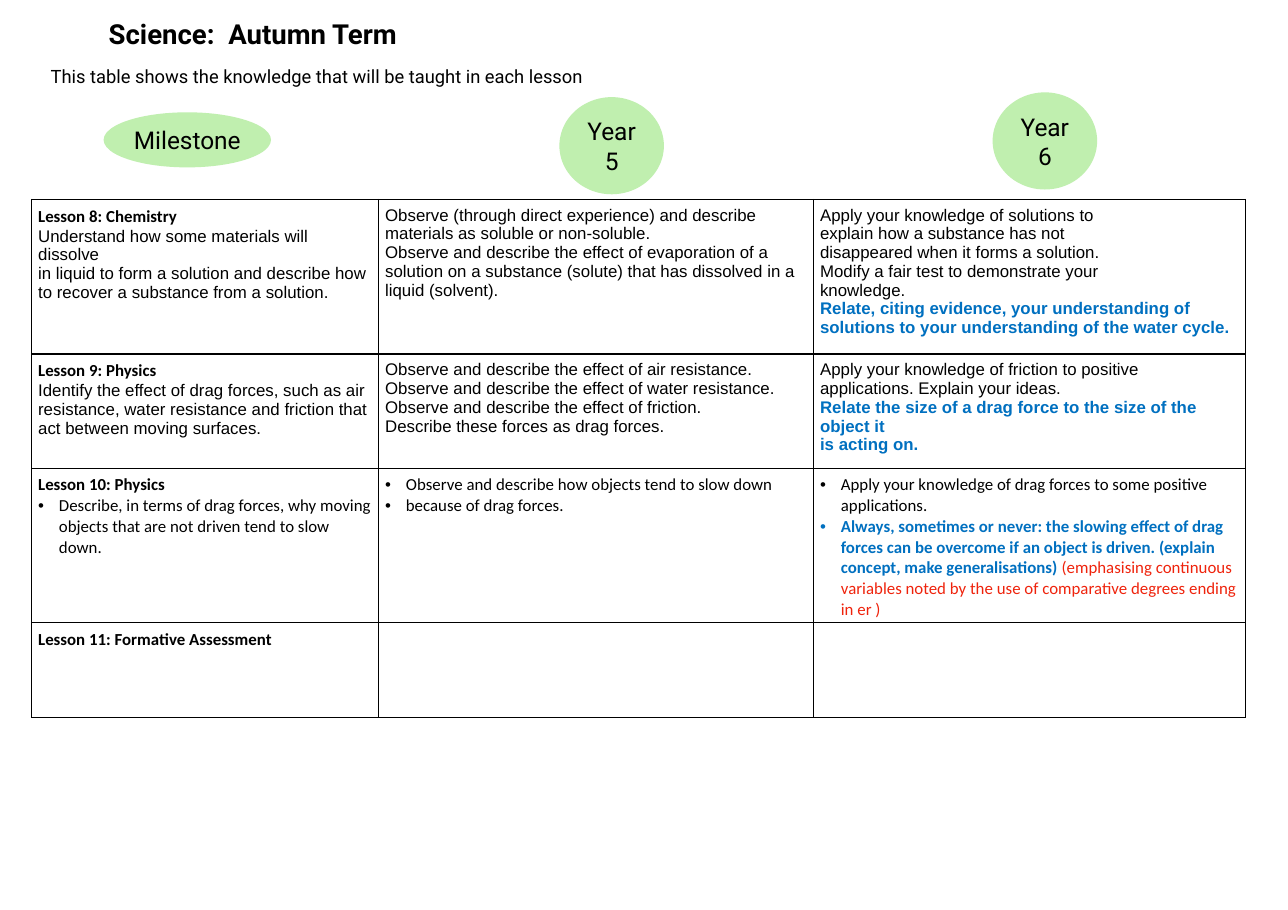
from lxml.etree import SubElement
from pptx import Presentation
from pptx.dml.color import RGBColor
from pptx.enum.shapes import MSO_SHAPE
from pptx.enum.text import MSO_ANCHOR, PP_ALIGN
from pptx.oxml.ns import qn
from pptx.util import Cm, Pt

rgb = RGBColor.from_string
BLACK, BLUE, RED, GREEN, WHITE = "000000", "0070C0", "EF230C", "C0EFAF", "FFFFFF"


def add_run(p, text, size, font, color=BLACK, bold=False):
    r = p.add_run()
    r.text = text
    r.font.size = Pt(size)
    r.font.name = font
    r.font.bold = bold
    r.font.color.rgb = rgb(color)


def set_frame(tf, wrap=True):
    tf.word_wrap = wrap
    tf.vertical_anchor = MSO_ANCHOR.MIDDLE
    tf.margin_left = tf.margin_right = tf.margin_top = tf.margin_bottom = Cm(0.1)
    return tf.paragraphs[0]


prs = Presentation()
prs.slide_width, prs.slide_height = Cm(29.7), Cm(20.98)
s = prs.slides.add_slide(prs.slide_layouts[6])

title = s.shapes.add_textbox(Cm(2.13), Cm(0.28), Cm(7.4), Cm(1))
p = set_frame(title.text_frame, wrap=False)
p.alignment = PP_ALIGN.CENTER
add_run(p, "Science:  Autumn Term", 18, "Roboto", bold=True)

intro = s.shapes.add_textbox(Cm(1.07), Cm(1.4), Cm(26.5), Cm(0.71))
p = set_frame(intro.text_frame)
add_run(p, "This table shows the knowledge that will be taught in each lesson", 12, "Roboto")

STYLES = {
    "head": ("Calibri", BLACK, True),
    "plain": ("Arial", BLACK, False),
    "extend": ("Arial", BLUE, True),
    "bullet": ("Calibri", BLACK, False),
    "bullet extend": ("Calibri", BLUE, True),
    "note": ("Calibri", RED, False),
}
lessons = [
    [
        [("head", "Lesson 8: Chemistry"),
         ("plain", "Understand how some materials will dissolve"),
         ("plain", "in liquid to form a solution and describe how"),
         ("plain", "to recover a substance from a solution.")],
        [("plain", "Observe (through direct experience) and describe"),
         ("plain", "materials as soluble or non-soluble."),
         ("plain", "Observe and describe the effect of evaporation of a"),
         ("plain", "solution on a substance (solute) that has dissolved in a"),
         ("plain", "liquid (solvent).")],
        [("plain", "Apply your knowledge of solutions to"),
         ("plain", "explain how a substance has not"),
         ("plain", "disappeared when it forms a solution."),
         ("plain", "Modify a fair test to demonstrate your"),
         ("plain", "knowledge."),
         ("extend", "Relate, citing evidence, your understanding of"),
         ("extend", "solutions to your understanding of the water cycle.")],
    ],
    [
        [("head", "Lesson 9: Physics"),
         ("plain", "Identify the effect of drag forces, such as air"),
         ("plain", "resistance, water resistance and friction that"),
         ("plain", "act between moving surfaces.")],
        [("plain", "Observe and describe the effect of air resistance."),
         ("plain", "Observe and describe the effect of water resistance."),
         ("plain", "Observe and describe the effect of friction."),
         ("plain", "Describe these forces as drag forces.")],
        [("plain", "Apply your knowledge of friction to positive"),
         ("plain", "applications. Explain your ideas."),
         ("extend", "Relate the size of a drag force to the size of the object it"),
         ("extend", "is acting on.")],
    ],
    [
        [("head", "Lesson 10: Physics"),
         ("bullet", "Describe, in terms of drag forces, why moving objects that are "
                    "not driven tend to slow down.")],
        [("bullet", "Observe and describe how objects tend to slow down"),
         ("bullet", "because of drag forces.")],
        [("bullet", "Apply your knowledge of drag forces to some positive applications."),
         ("bullet extend", "Always, sometimes or never: the slowing effect of drag forces can be "
                           "overcome if an object is driven. (explain concept, make "
                           "generalisations) "),
         ("note", "(emphasising continuous variables noted by the use of comparative "
                  "degrees ending in er )")],
    ],
    [[("head", "Lesson 11: Formative Assessment")], [], []],
]
col_widths = [8, 10.03, 9.96]
row_heights = [3.55, 2.61, 3.55, 2.18]

frame = s.shapes.add_table(len(row_heights), len(col_widths), Cm(0.73), Cm(4.6),
                           Cm(sum(col_widths)), Cm(sum(row_heights)))
table = frame.table
table.first_row = table.horz_banding = False
for col, width in zip(table.columns, col_widths):
    col.width = Cm(width)
for row, height, lesson in zip(table.rows, row_heights, lessons):
    row.height = Cm(height)
    for cell, items in zip(row.cells, lesson):
        cell.margin_left = cell.margin_right = cell.margin_top = cell.margin_bottom = Cm(0.15)
        tcPr = cell._tc.get_or_add_tcPr()
        for side in ("lnL", "lnR", "lnT", "lnB"):
            ln = SubElement(tcPr, qn(f"a:{side}"), w=str(Pt(1)))
            SubElement(SubElement(ln, qn("a:solidFill")), qn("a:srgbClr"), val=BLACK)
        cell.fill.solid()
        cell.fill.fore_color.rgb = rgb(WHITE)
        tf = cell.text_frame
        for i, (style, text) in enumerate(items):
            if style != "note":
                p = tf.paragraphs[0] if i == 0 else tf.add_paragraph()
            if style.startswith("bullet"):
                pPr = p._p.get_or_add_pPr()
                pPr.set("marL", str(Cm(0.48)))
                pPr.set("indent", str(-Cm(0.48)))
                SubElement(pPr, qn("a:buFont"), typeface="Arial")
                SubElement(pPr, qn("a:buChar"), char="•")
            add_run(p, text, 11, *STYLES[style])

headings = [
    ("Year 6", 22.89, 2.13, 2.41, 2.24),
    ("Year 5", 12.9, 2.24, 2.41, 2.24),
    ("Milestone", 2.39, 2.59, 3.86, 1.27),
]
for text, left, top, width, height in headings:
    sp = s.shapes.add_shape(MSO_SHAPE.OVAL, Cm(left), Cm(top), Cm(width), Cm(height))
    sp.shadow.inherit = False
    sp.fill.solid()
    sp.fill.fore_color.rgb = rgb(GREEN)
    sp.line.fill.background()
    p = set_frame(sp.text_frame)
    p.alignment = PP_ALIGN.CENTER
    add_run(p, text, 16, "Roboto")

prs.save("out.pptx")
